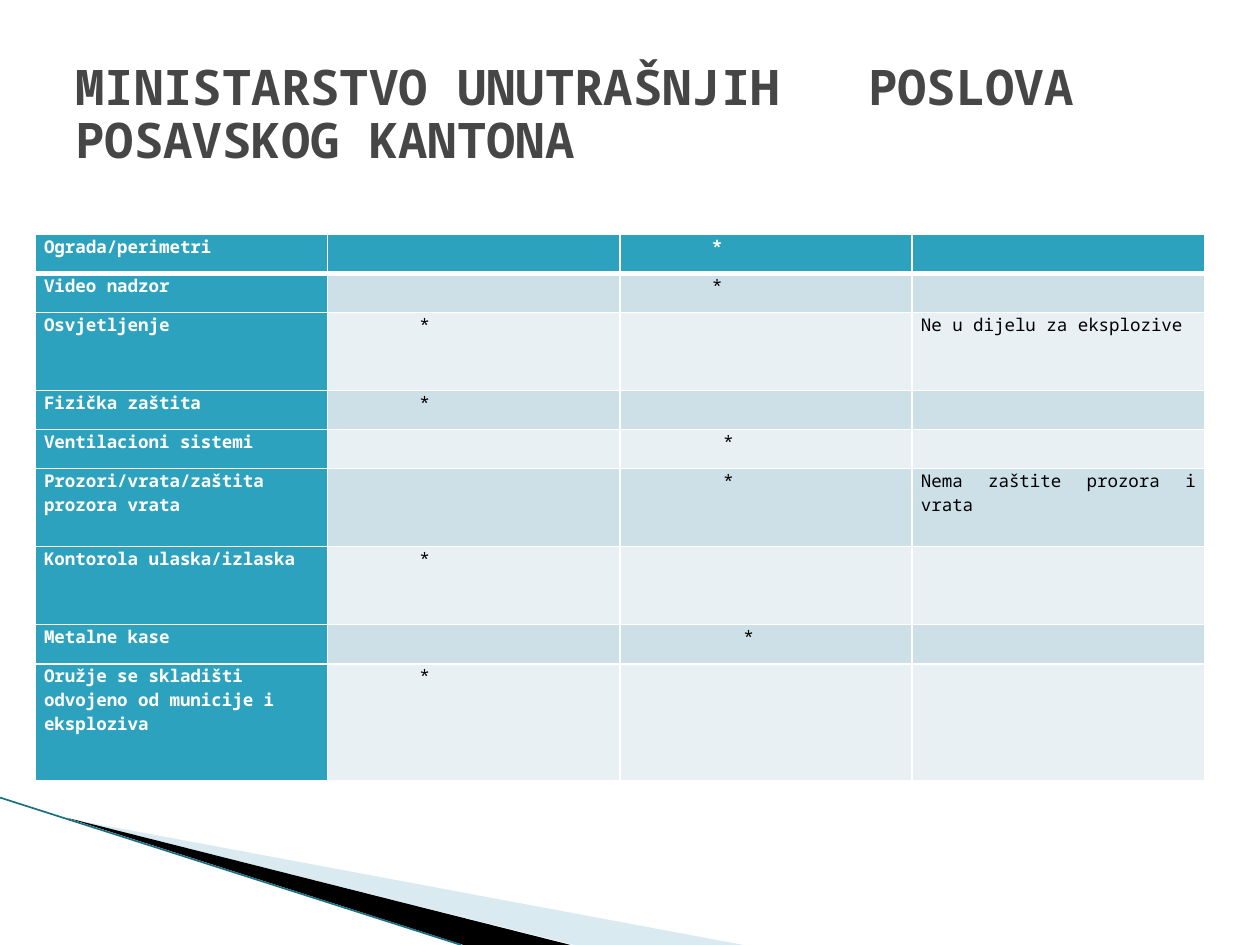
from pptx import Presentation
from pptx.dml.color import RGBColor
from pptx.enum.shapes import MSO_CONNECTOR
from pptx.enum.text import MSO_ANCHOR, MSO_AUTO_SIZE, PP_ALIGN
from pptx.oxml.xmlchemy import OxmlElement
from pptx.util import Inches, Pt

FONT = "Noto Sans Mono"
COLORS = {
    "title": "464646", "white": "FFFFFF", "text": "000000",
    "header": "2DA2BF", "band_dark": "CDE0E8", "band_light": "E8F0F4",
    "wedge_light": "A0CBDC", "wedge_dark": "000000", "edge": "1B6F83",
}
TITLE_FORMAT = {"name": FONT, "size": Pt(28), "bold": True}
CELL_FORMAT = {"name": FONT, "size": Pt(10)}
ROW_UNIT = 0.31
COLUMN_WIDTH = 2.32
MARK = "*"
MARK_INDENT = 0.66

# Height in row units, then the text of each column
ROWS = [
    (1, "Ograda/perimetri", "", MARK, ""),
    (1, "Video nadzor", "", MARK, ""),
    (2, "Osvjetljenje", MARK, "", "Ne u dijelu za eksplozive"),
    (1, "Fizička zaštita", MARK, "", ""),
    (1, "Ventilacioni sistemi", "", MARK, ""),
    (2, "Prozori/vrata/zaštita prozora vrata", "", MARK, "Nema zaštite prozora i vrata"),
    (2, "Kontorola ulaska/izlaska", MARK, "", ""),
    (1, "Metalne kase", "", MARK, ""),
    (3, "Oružje se skladišti odvojeno od municije i eksploziva", MARK, "", ""),
]
WIDER_INDENTS = {4: 0.75, 5: 0.75, 7: 0.91}


def rgb(name):
    return RGBColor.from_string(COLORS[name])


def add_child(parent, tag, **attributes):
    child = OxmlElement(tag)
    for key, value in attributes.items():
        child.set(key, str(value))
    parent.append(child)
    return child


def format_font(font, values, color):
    for key, value in values.items():
        setattr(font, key, value)
    font.color.rgb = rgb(color)


def add_wedge(slide, points, color, opacity=100):
    (start_x, start_y), *others = [(Inches(x), Inches(y)) for x, y in points]
    builder = slide.shapes.build_freeform(start_x, start_y)
    builder.add_line_segments(others)
    shape = builder.convert_to_shape()
    shape.shadow.inherit = False
    shape.line.fill.background()
    shape.fill.solid()
    shape.fill.fore_color.rgb = rgb(color)
    if opacity < 100:
        color_element = shape._element.spPr.find(".//{*}srgbClr")
        add_child(color_element, "a:alpha", val=opacity * 1000)


def add_edge(slide, start, end):
    ends = [Inches(value) for value in (*start, *end)]
    connector = slide.shapes.add_connector(MSO_CONNECTOR.STRAIGHT, *ends)
    connector.line.color.rgb = rgb("edge")
    connector.line.width = Pt(0.95)
    add_child(connector._element.spPr, "a:effectLst")


def set_title(slide):
    title = slide.shapes.title
    title.left, title.top = Inches(0.5), Inches(0.3)
    title.width, title.height = Inches(9), Inches(1.25)
    frame = title.text_frame
    frame.auto_size = MSO_AUTO_SIZE.NONE
    frame.vertical_anchor = MSO_ANCHOR.MIDDLE
    paragraph = frame.paragraphs[0]
    paragraph.alignment = PP_ALIGN.LEFT
    paragraph.line_spacing = 0.9
    tabs = add_child(paragraph._p.get_or_add_pPr(), "a:tabLst")
    add_child(tabs, "a:tab", pos=Inches(6.29), algn="l")
    run = paragraph.add_run()
    run.text = "MINISTARSTVO UNUTRAŠNJIH\tPOSLOVA POSAVSKOG KANTONA"
    format_font(run.font, TITLE_FORMAT, "title")


def set_borders(cell, widths):
    """Draw white cell borders; widths maps a side (L, R, T, B) to points."""
    properties = cell._tc.get_or_add_tcPr()
    for position, (side, width) in enumerate(widths.items()):
        line = OxmlElement(f"a:ln{side}")
        line.set("w", str(Pt(width)))
        fill = add_child(line, "a:solidFill")
        add_child(fill, "a:srgbClr", val=COLORS["white"])
        properties.insert(position, line)


def fill_cell(cell, text, row, column):
    is_header = row == 0 or column == 0
    band = "band_dark" if row % 2 else "band_light"
    cell.fill.solid()
    cell.fill.fore_color.rgb = rgb("header" if is_header else band)
    cell.margin_left = cell.margin_right = Inches(0.07)
    cell.margin_top = cell.margin_bottom = 0
    set_borders(cell, {"L": 1, "R": 1, "T": 3 if row == 1 else 1, "B": 3 if row == 0 else 1})

    paragraph = cell.text_frame.paragraphs[0]
    if not text:
        add_child(paragraph._p, "a:endParaRPr", sz=1000)
        return
    is_last_label = row == len(ROWS) - 1 and column == 0
    paragraph.alignment = PP_ALIGN.LEFT if is_last_label else PP_ALIGN.JUSTIFY
    if text == MARK:
        indent = WIDER_INDENTS.get(row, MARK_INDENT)
        paragraph._p.get_or_add_pPr().set("marL", str(Inches(indent)))
    run = paragraph.add_run()
    run.text = text
    format_font(run.font, {**CELL_FORMAT, "bold": is_header}, "white" if is_header else "text")


def add_security_table(slide):
    column_count = len(ROWS[0]) - 1
    height = ROW_UNIT * sum(row[0] for row in ROWS)
    table = slide.shapes.add_table(
        len(ROWS), column_count, Inches(0.28), Inches(1.86),
        Inches(COLUMN_WIDTH * column_count), Inches(height)).table
    for row, (units, *texts) in enumerate(ROWS):
        table.rows[row].height = Inches(ROW_UNIT * units)
        for column, text in enumerate(texts):
            fill_cell(table.cell(row, column), text, row, column)


def main():
    presentation = Presentation()
    presentation.slide_width, presentation.slide_height = Inches(10), Inches(7.5)
    slide = presentation.slides.add_slide(presentation.slide_layouts[5])
    add_wedge(slide, [(0.55, 6.5), (5.9, 7.5), (4.56, 7.5)], "wedge_light", 40)
    add_wedge(slide, [(0.53, 6.49), (4.53, 7.5), (3.68, 7.5)], "wedge_dark")
    add_edge(slide, (0, 6.33), (3.66, 7.5))
    add_security_table(slide)
    set_title(slide)
    presentation.save("out.pptx")


if __name__ == "__main__":
    main()
